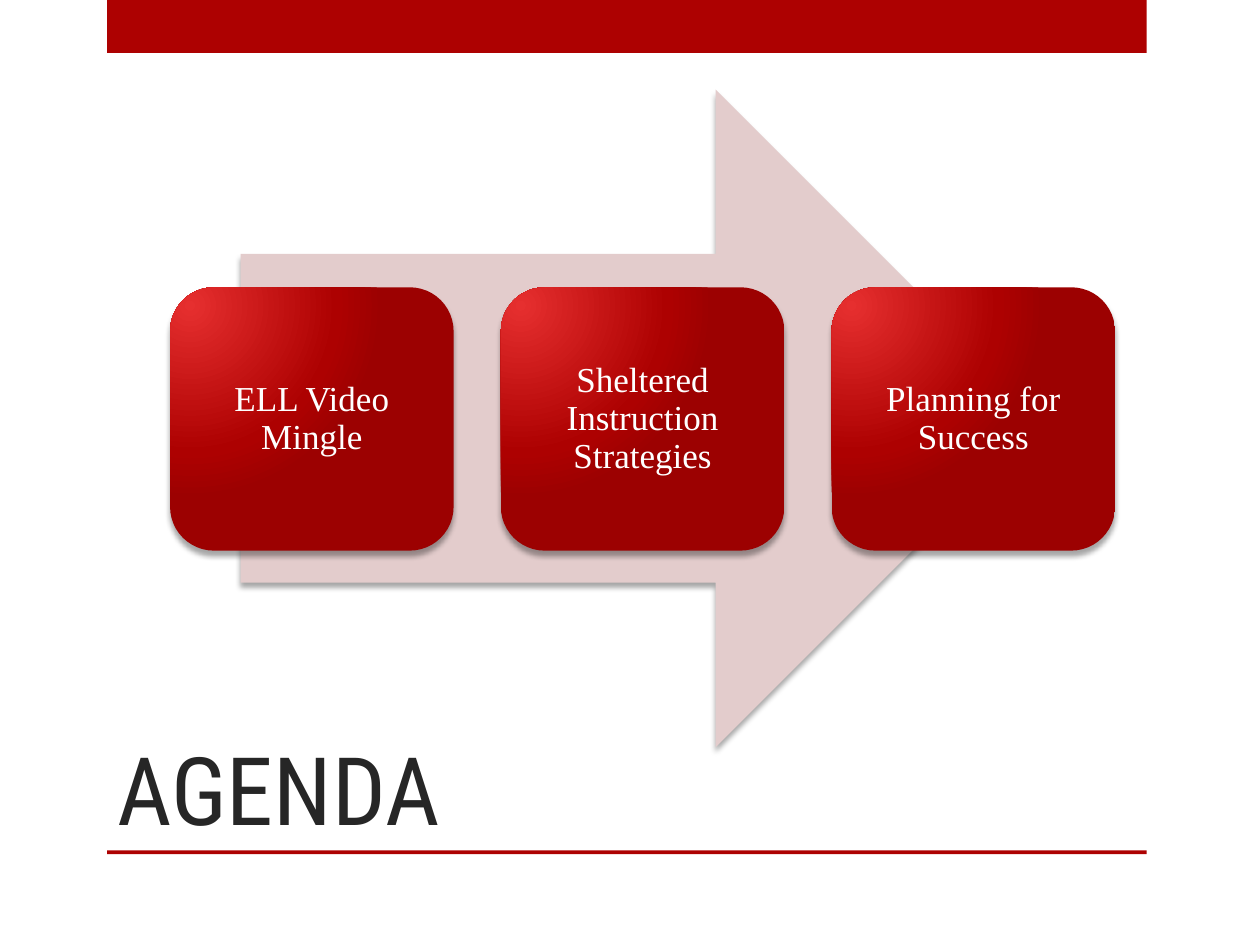
from dataclasses import dataclass

import lxml.etree
import pptx
import pptx.dml.color
import pptx.enum.shapes
import pptx.enum.text
import pptx.oxml
import pptx.oxml.ns
import pptx.util

Inches, Pt = pptx.util.Inches, pptx.util.Pt
SHAPE = pptx.enum.shapes.MSO_SHAPE
ANCHOR = pptx.enum.text.MSO_ANCHOR
ALIGN = pptx.enum.text.PP_ALIGN
qn = pptx.oxml.ns.qn


@dataclass(frozen=True)
class Theme:
    accent: str = "AD0101"
    arrow: str = "E3CCCC"
    title_color: str = "262626"
    card_color: str = "FFFFFF"
    card_stops: tuple = ((0, "E62F2F"), (76, "AD0101"), (100, "9C0101"))
    title_font: str = "Roboto Condensed"
    card_font: str = "Times New Roman"
    title_size: int = 54
    card_size: int = 20


class SlideBuilder:
    def __init__(self, slide, theme):
        self.s = slide
        self.theme = theme

    def style_text(self, p, font, size, color):
        for r in p.runs:
            r.font.name = font
            r.font.size = Pt(size)
            r.font.color.rgb = pptx.dml.color.RGBColor.from_string(color)

    def shape(self, kind, left, top, width, height, color):
        sp = self.s.shapes.add_shape(
            kind, Inches(left), Inches(top), Inches(width), Inches(height))
        sp.fill.solid()
        sp.fill.fore_color.rgb = pptx.dml.color.RGBColor.from_string(color)
        sp.line.fill.background()
        sp.shadow.inherit = False
        return sp

    def add_shadow(self, sp):
        effects = sp._element.spPr.find(qn("a:effectLst"))
        shadow = lxml.etree.SubElement(
            effects, qn("a:outerShdw"), blurRad=str(Pt(3)), dist=str(Pt(3)),
            dir="5400000", rotWithShape="0")
        color = lxml.etree.SubElement(shadow, qn("a:srgbClr"), val="000000")
        lxml.etree.SubElement(color, qn("a:alpha"), val="35000")

    def radial_fill(self, sp):
        """Replace the solid fill by a glow from the upper left corner."""
        stops = "".join(
            f'<a:gs pos="{pos * 1000}"><a:srgbClr val="{color}"/></a:gs>'
            for pos, color in self.theme.card_stops)
        grad = pptx.oxml.parse_xml(
            f'<a:gradFill {pptx.oxml.ns.nsdecls("a")} rotWithShape="1">'
            f'<a:gsLst>{stops}</a:gsLst><a:path path="circle">'
            '<a:fillToRect l="15000" t="15000" r="100000" b="100000"/>'
            '</a:path></a:gradFill>')
        spPr = sp._element.spPr
        spPr.replace(spPr.find(qn("a:solidFill")), grad)

    def title(self, text, left, top, width, height):
        sp = self.s.shapes.title
        sp.left, sp.top = Inches(left), Inches(top)
        sp.width, sp.height = Inches(width), Inches(height)
        tf = sp.text_frame
        tf.text = text
        tf.vertical_anchor = ANCHOR.BOTTOM
        tf.auto_size = pptx.enum.text.MSO_AUTO_SIZE.NONE
        p = tf.paragraphs[0]
        p.alignment = ALIGN.LEFT
        self.style_text(p, self.theme.title_font, self.theme.title_size,
                        self.theme.title_color)

    def bar(self, top, height):
        self.shape(SHAPE.RECTANGLE, 0.85, top, 8.25, height, self.theme.accent)

    def arrow(self, left, top, width, height):
        sp = self.shape(SHAPE.RIGHT_ARROW, left, top, width, height,
                        self.theme.arrow)
        self.add_shadow(sp)

    def card(self, text, left, top, width, height):
        sp = self.shape(SHAPE.ROUNDED_RECTANGLE, left, top, width, height,
                        self.theme.accent)
        self.radial_fill(sp)
        self.add_shadow(sp)
        tf = sp.text_frame
        tf.text = text
        tf.word_wrap = True
        tf.vertical_anchor = ANCHOR.MIDDLE
        tf.margin_left = tf.margin_right = Inches(0.08)
        tf.margin_top = tf.margin_bottom = Inches(0.08)
        p = tf.paragraphs[0]
        p.alignment = ALIGN.CENTER
        p.line_spacing = 0.9
        self.style_text(p, self.theme.card_font, self.theme.card_size,
                        self.theme.card_color)


def main():
    prs = pptx.Presentation()
    prs.slide_width, prs.slide_height = Inches(10), Inches(7.5)
    title_only = prs.slide_layouts[5]
    s = SlideBuilder(prs.slides.add_slide(title_only), Theme())

    s.bar(top=0, height=0.42)
    s.bar(top=6.75, height=0.03)
    s.title("AGENDA", 0.83, 5, 7.42, 1.75)

    s.arrow(1.91, 0.71, 6.38, 5.22)
    steps = ("ELL Video Mingle", "Sheltered Instruction Strategies",
             "Planning for Success")
    card_width, gap = 2.25, 0.375
    for i, step in enumerate(steps):
        s.card(step, 1.35 + i * (card_width + gap), 2.28, card_width, 2.09)

    prs.save("out.pptx")


if __name__ == "__main__":
    main()
